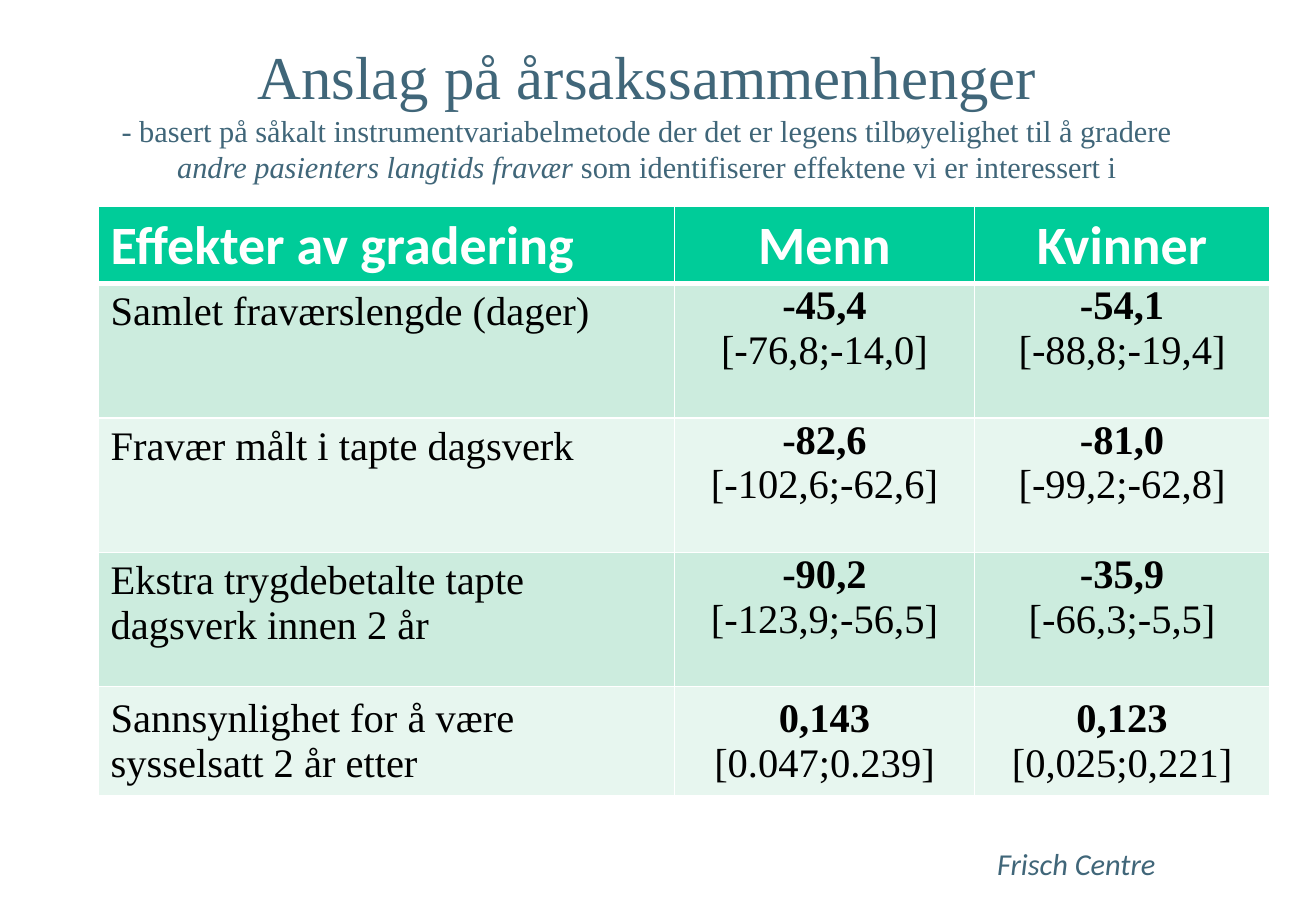
"""Build a slide with a table of estimated effects of graded sick leave."""
import dataclasses

import lxml.etree
import pptx
import pptx.dml.color
import pptx.enum.text
import pptx.oxml.ns
import pptx.util

Cm = pptx.util.Cm
Align = pptx.enum.text.PP_ALIGN
Anchor = pptx.enum.text.MSO_ANCHOR


@dataclasses.dataclass(frozen=True)
class Theme:
    serif: str = "Times New Roman"
    sans: str = "Calibri"
    accent: str = "406679"
    header: str = "00CC99"
    bands: tuple = ("CCECDE", "E7F6EF")
    white: str = "FFFFFF"
    black: str = "000000"
    title_size: int = 36
    header_size: int = 32
    body_size: int = 24
    small_size: int = 18


THEME = Theme()
HEADINGS = ("Effekter av gradering", "Menn", "Kvinner")
EFFECTS = (
    ("Samlet fraværslengde (dager)", "-45,4\n[-76,8;-14,0]", "-54,1\n[-88,8;-19,4]"),
    ("Fravær målt i tapte dagsverk", "-82,6\n[-102,6;-62,6]", "-81,0\n[-99,2;-62,8]"),
    ("Ekstra trygdebetalte tapte dagsverk innen 2 år",
     "-90,2\n[-123,9;-56,5]", "-35,9\n[-66,3;-5,5]"),
    ("Sannsynlighet for å være sysselsatt 2 år etter",
     "0,143\n[0.047;0.239]", "0,123\n[0,025;0,221]"),
)
COLUMN_WIDTHS = (12.04, 6.27, 6.17)
ROW_HEIGHTS = (1.6, 2.81, 2.81, 2.81, 2.11)


def rgb(value):
    """Turn a hex string into a colour."""
    return pptx.dml.color.RGBColor.from_string(value)


def style(font, name, size, color, bold=False, italic=False):
    """Apply typeface, size, colour and emphasis to a font."""
    font.name = name
    font.size = pptx.util.Pt(size)
    font.color.rgb = rgb(color)
    font.bold = bold
    font.italic = italic


def add_title(slide):
    """Add the heading with its explanatory subtitle."""
    shape = slide.shapes.add_textbox(Cm(1.83), Cm(1.07), Cm(23.39), Cm(2.54))
    shape.text_frame.word_wrap = True
    shape.text_frame.vertical_anchor = Anchor.MIDDLE
    paragraph = shape.text_frame.paragraphs[0]
    paragraph.text = "Anslag på årsakssammenhenger\v"
    paragraph.alignment = Align.CENTER
    style(paragraph.runs[0].font, THEME.serif, THEME.title_size, THEME.accent)
    subtitle = (
        ("- basert på såkalt instrumentvariabelmetode der det er legens "
         "tilbøyelighet til å gradere ", False),
        ("andre pasienters langtids fravær ", True),
        ("som identifiserer effektene vi er interessert i", False),
    )
    for text, italic in subtitle:
        run = paragraph.add_run()
        run.text = text
        style(run.font, THEME.serif, THEME.small_size, THEME.accent, italic=italic)


def add_footer(slide):
    """Add the name of the centre at the bottom right."""
    shape = slide.shapes.add_textbox(Cm(20.09), Cm(17.55), Cm(4.32), Cm(1.02))
    shape.text_frame.word_wrap = False
    paragraph = shape.text_frame.paragraphs[0]
    paragraph.text = "Frisch Centre"
    paragraph.alignment = Align.RIGHT
    style(paragraph.runs[0].font, THEME.sans, THEME.small_size, THEME.accent, italic=True)


def paint_cell(cell, fill, top=1, bottom=1):
    """Give a cell white borders of the given point widths and a solid fill."""
    properties = cell._tc.get_or_add_tcPr()
    for side, width in (("L", 1), ("R", 1), ("T", top), ("B", bottom)):
        line = lxml.etree.SubElement(
            properties, pptx.oxml.ns.qn(f"a:ln{side}"), w=str(pptx.util.Pt(width)))
        solid = lxml.etree.SubElement(line, pptx.oxml.ns.qn("a:solidFill"))
        lxml.etree.SubElement(solid, pptx.oxml.ns.qn("a:srgbClr"), val=THEME.white)
    cell.fill.solid()
    cell.fill.fore_color.rgb = rgb(fill)


def fill_header(cell, text, centred):
    """Write a column heading."""
    paint_cell(cell, THEME.header, bottom=3)
    cell.text_frame.text = text
    paragraph = cell.text_frame.paragraphs[0]
    paragraph.alignment = Align.CENTER if centred else Align.LEFT
    style(paragraph.runs[0].font, THEME.sans, THEME.header_size, THEME.white, bold=True)


def fill_body(cell, text, is_value):
    """Write a row label, or a bold estimate above its interval."""
    cell.text_frame.text = text
    if is_value:
        cell.margin_left = cell.margin_right = Cm(0.18)
        cell.margin_top = cell.margin_bottom = Cm(0)
    for index, paragraph in enumerate(cell.text_frame.paragraphs):
        paragraph.alignment = Align.CENTER if is_value else Align.LEFT
        style(paragraph.runs[0].font, THEME.serif, THEME.body_size, THEME.black,
              bold=is_value and index == 0)


def add_effects_table(slide):
    """Add the table of effects for men and women."""
    table = slide.shapes.add_table(
        len(ROW_HEIGHTS), len(COLUMN_WIDTHS), Cm(2.06), Cm(4.32),
        Cm(sum(COLUMN_WIDTHS)), Cm(sum(ROW_HEIGHTS))).table
    table.horz_banding = False
    for column, width in zip(table.columns, COLUMN_WIDTHS):
        column.width = Cm(width)
    for row, height in zip(table.rows, ROW_HEIGHTS):
        row.height = Cm(height)
    for column, heading in enumerate(HEADINGS):
        fill_header(table.cell(0, column), heading, column > 0)
    for row, effect in enumerate(EFFECTS, start=1):
        for column, text in enumerate(effect):
            cell = table.cell(row, column)
            paint_cell(cell, THEME.bands[(row - 1) % 2], top=3 if row == 1 else 1)
            fill_body(cell, text, column > 0)
            is_last = row == len(EFFECTS)
            cell.vertical_anchor = Anchor.MIDDLE if is_last else Anchor.TOP


def main():
    """Create the presentation and save it."""
    presentation = pptx.Presentation()
    presentation.slide_width = Cm(27.51)
    presentation.slide_height = Cm(19.05)
    slide = presentation.slides.add_slide(presentation.slide_layouts[6])
    add_footer(slide)
    add_title(slide)
    add_effects_table(slide)
    presentation.save("out.pptx")


if __name__ == "__main__":
    main()
